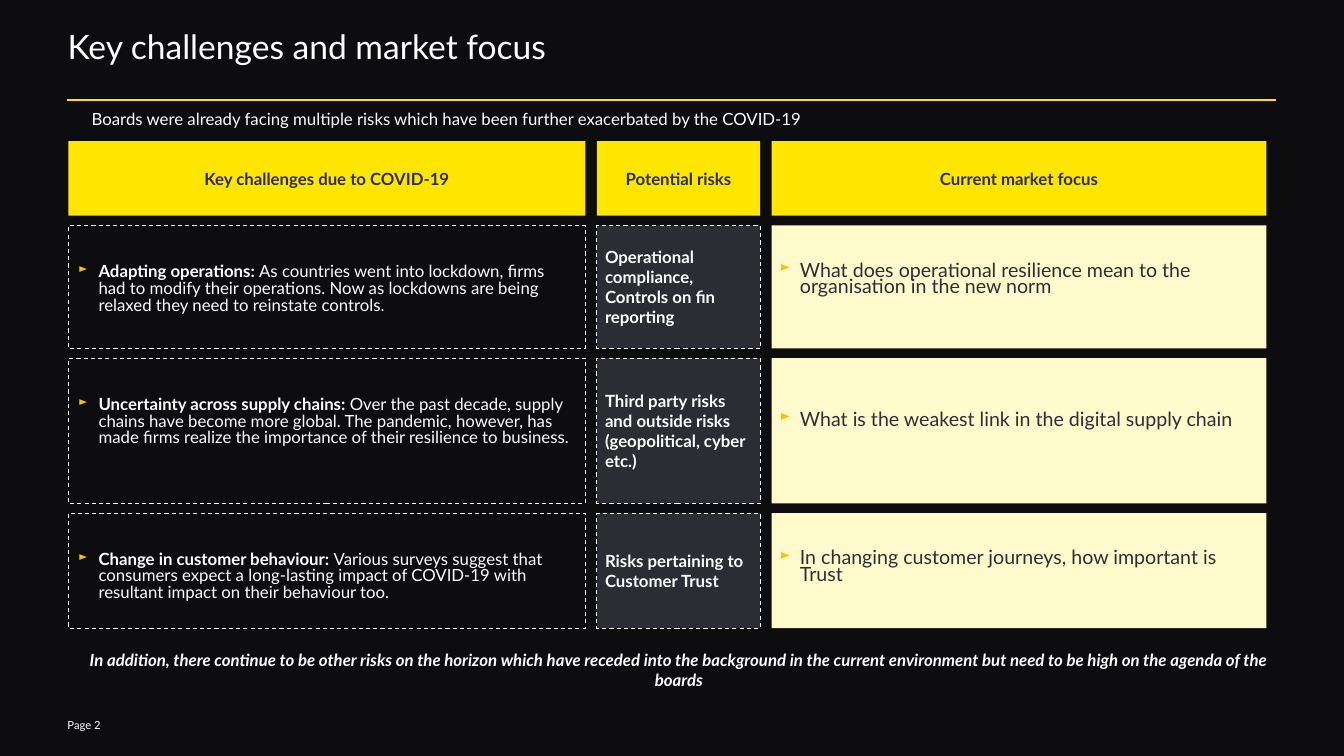
import pptx
import pptx.dml.color
import pptx.enum.dml
import pptx.enum.shapes
import pptx.enum.text
import pptx.oxml
import pptx.oxml.ns
import pptx.util
from dataclasses import dataclass

Inches, Pt = pptx.util.Inches, pptx.util.Pt
Align = pptx.enum.text.PP_ALIGN
Anchor = pptx.enum.text.MSO_ANCHOR

# Content
TITLE = "Key challenges and market focus"
LEAD = "Boards were already facing multiple risks which have been further exacerbated by the COVID-19"
CLOSING = ("In addition, there continue to be other risks on the horizon which have receded into the "
           "background in the current environment but need to be high on the agenda of the boards")
PAGE = "Page 2"
HEADINGS = ["Key challenges due to COVID-19", "Potential risks", "Current market focus"]
# Challenge, explanation, risk, market focus, lines of space above the focus
ROWS = [
    ("Adapting operations: ",
     "As countries went into lockdown, firms had to modify their operations. "
     "Now as lockdowns are being relaxed they need to reinstate controls.",
     "Operational compliance, Controls on fin reporting",
     "What does operational resilience mean to the organisation in the new norm", 2),
    ("Uncertainty across supply chains: ",
     "Over the past decade, supply chains have become more global. The pandemic, however, "
     "has made firms realize the importance of their resilience to business.",
     "Third party risks and outside risks (geopolitical, cyber etc.)",
     "What is the weakest link in the digital supply chain", 3),
    ("Change in customer behaviour: ",
     "Various surveys suggest that consumers expect a long-lasting impact of COVID-19 "
     "with resultant impact on their behaviour too.",
     "Risks pertaining to Customer Trust",
     "In changing customer journeys, how important is Trust", 2),
]

# Layout in inches
COLUMN_WIDTHS = [5.13, 1.62, 4.91]
ROW_HEIGHTS = [0.74, 1.22, 1.44, 1.14]
GRID_LEFT, GRID_TOP, COLUMN_GAP, ROW_GAP = 0.68, 1.4, 0.115, 0.097
BULLET_LINE = 12  # points


@dataclass(frozen=True)
class Theme:
    font: str = "Lato"
    background: str = "0D0D10"
    yellow: str = "FFE600"
    pale: str = "FFFACC"
    panel: str = "2C2C35"
    dark: str = "2E2E38"
    white: str = "FFFFFF"
    bullet: str = "FFC000"
    title: int = 24
    focus: int = 14
    body: int = 12
    footer: int = 8


THEME = Theme()


def rgb(value):
    return pptx.dml.color.RGBColor.from_string(value)


def offsets(start, sizes, gap):
    return [start + sum(sizes[:i]) + gap * i for i in range(len(sizes))]


def write(shape, runs, color=THEME.white, size=THEME.body, align=Align.LEFT,
          anchor=Anchor.TOP, insets=(0.1, 0.05, 0.1, 0.05), italic=False):
    """Fill a shape with one paragraph of (text, bold) runs."""
    frame = shape.text_frame
    frame.word_wrap = True
    frame.vertical_anchor = anchor
    (frame.margin_left, frame.margin_top,
     frame.margin_right, frame.margin_bottom) = map(Inches, insets)
    paragraph = frame.paragraphs[0]
    paragraph.alignment = align
    for text, bold in runs:
        run = paragraph.add_run()
        run.text = text
        font = run.font
        font.name, font.size, font.bold, font.italic = THEME.font, Pt(size), bold, italic
        font.color.rgb = rgb(color)
    return paragraph


def add_bullet(paragraph):
    properties = paragraph._p.get_or_add_pPr()
    properties.set("marL", str(Inches(0.2)))
    properties.set("indent", str(-Inches(0.2)))
    namespace = pptx.oxml.ns.nsdecls("a")
    for xml in (f'<a:buClr {namespace}><a:srgbClr val="{THEME.bullet}"/></a:buClr>',
                f'<a:buSzPct {namespace} val="70000"/>',
                f'<a:buChar {namespace} char="►"/>'):
        properties.append(pptx.oxml.parse_xml(xml))
    paragraph.line_spacing = Pt(BULLET_LINE)


def add_box(slide, box, fill=None, dashed=False):
    shape = slide.shapes.add_shape(pptx.enum.shapes.MSO_SHAPE.RECTANGLE, *map(Inches, box))
    shape.shadow.inherit = False
    if fill:
        shape.fill.solid()
        shape.fill.fore_color.rgb = rgb(fill)
    else:
        shape.fill.background()
    if dashed:
        shape.line.color.rgb = rgb(THEME.white)
        shape.line.width = Pt(0.75)
        shape.line.dash_style = pptx.enum.dml.MSO_LINE.DASH
    else:
        shape.line.fill.background()
    return shape


def add_text(slide, box, text, bold=False, **style):
    return write(slide.shapes.add_textbox(*map(Inches, box)), [(text, bold)], **style)


def add_grid(slide):
    lefts = offsets(GRID_LEFT, COLUMN_WIDTHS, COLUMN_GAP)
    tops = offsets(GRID_TOP, ROW_HEIGHTS, ROW_GAP)

    def cell(row, column):
        return lefts[column], tops[row], COLUMN_WIDTHS[column], ROW_HEIGHTS[row]

    # Column headings
    for column, heading in enumerate(HEADINGS):
        write(add_box(slide, cell(0, column), THEME.yellow), [(heading, True)],
              color=THEME.dark, align=Align.CENTER, anchor=Anchor.MIDDLE)

    # Challenge, risk and focus of each row
    for row, (challenge, detail, risk, focus, space) in enumerate(ROWS, start=1):
        add_bullet(write(add_box(slide, cell(row, 0), dashed=True),
                         [(challenge, True), (detail, False)],
                         insets=(0.1, 0.05 + 2 * BULLET_LINE / 72, 0.1, 0.05)))
        write(add_box(slide, cell(row, 1), THEME.panel, dashed=True), [(risk, True)],
              anchor=Anchor.MIDDLE, insets=(0.08, 0.05, 0.04, 0.05))
        add_bullet(write(add_box(slide, cell(row, 2), THEME.pale), [(focus, False)],
                         color=THEME.dark, size=THEME.focus,
                         insets=(0.08, 0.05 + space * BULLET_LINE / 72, 0.04, 0.05)))


def main():
    presentation = pptx.Presentation()
    presentation.slide_width, presentation.slide_height = Inches(13.34), Inches(7.5)
    slide = presentation.slides.add_slide(presentation.slide_layouts[6])
    slide.background.fill.solid()
    slide.background.fill.fore_color.rgb = rgb(THEME.background)

    # Title, rule and lead
    title = add_text(slide, (0.67, 0.32, 12.01, 0.65), TITLE, size=THEME.title, insets=(0, 0, 0, 0))
    title.line_spacing = 0.85
    rule = slide.shapes.add_connector(pptx.enum.shapes.MSO_CONNECTOR.STRAIGHT,
                                      *map(Inches, (0.67, 0.99, 12.67, 0.99)))
    rule.line.color.rgb = rgb(THEME.yellow)
    rule.line.width = Pt(1.5)
    rule._element.spPr.append(pptx.oxml.parse_xml(f'<a:effectLst {pptx.oxml.ns.nsdecls("a")}/>'))
    add_text(slide, (0.68, 1.04, 7.51, 0.28), LEAD, align=Align.CENTER, insets=(0.04,) * 4)

    add_grid(slide)

    # Closing statement and page number
    add_text(slide, (0.74, 6.4, 12, 0.5), CLOSING, bold=True, italic=True, align=Align.CENTER)
    add_text(slide, (0.67, 7.08, 0.73, 0.2), PAGE, size=THEME.footer, insets=(0, 0.05, 0.1, 0.05))

    presentation.save("out.pptx")


if __name__ == "__main__":
    main()
